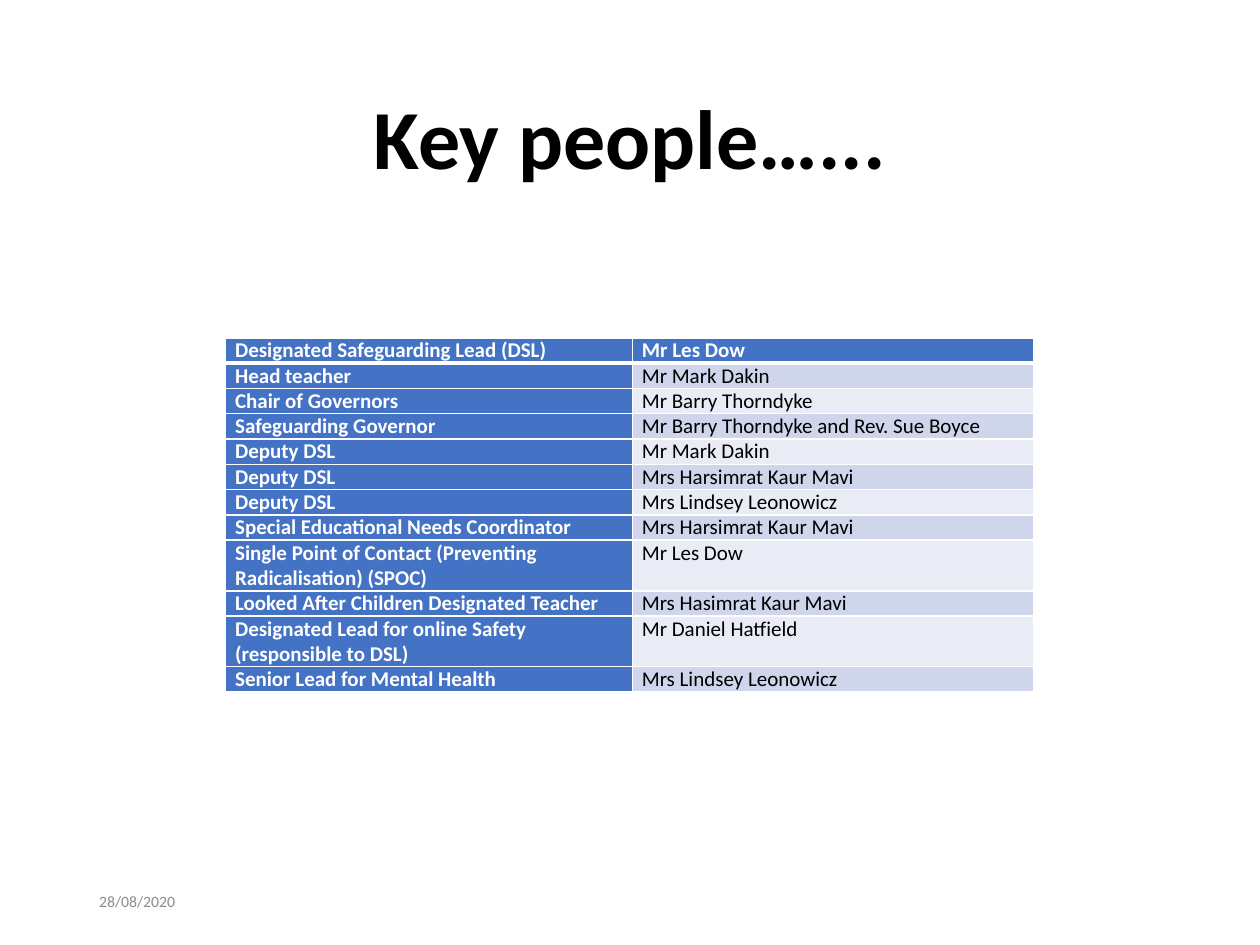
import pptx
import pptx.dml.color
import pptx.enum.text
import pptx.oxml
import pptx.oxml.ns
import pptx.util
from pptx.util import Cm

KEY_PEOPLE = [
    ("Designated Safeguarding Lead (DSL)", "Mr Les Dow"),
    ("Head teacher", "Mr Mark Dakin"),
    ("Chair of Governors", "Mr Barry Thorndyke"),
    ("Safeguarding Governor", "Mr Barry Thorndyke and Rev. Sue Boyce"),
    ("Deputy DSL", "Mr Mark Dakin"),
    ("Deputy DSL", "Mrs Harsimrat Kaur Mavi"),
    ("Deputy DSL", "Mrs Lindsey Leonowicz"),
    ("Special Educational Needs Coordinator", "Mrs Harsimrat Kaur Mavi"),
    ("Single Point of Contact (Preventing Radicalisation) (SPOC)", "Mr Les Dow"),
    ("Looked After Children Designated Teacher", "Mrs Hasimrat Kaur Mavi"),
    ("Designated Lead for online Safety (responsible to DSL)", "Mr Daniel Hatfield"),
    ("Senior Lead for Mental Health", "Mrs Lindsey Leonowicz"),
]
LINE_HEIGHT = 0.51
CHARS_PER_LINE = 42


def colour(hex_code):
    return pptx.dml.color.RGBColor.from_string(hex_code)


class SlideBuilder:
    font = "Calibri"
    white, black, grey = "FFFFFF", "000000", "8C8C8C"
    accent = "4472C4"
    bands = ("E9EBF5", "CFD5EA")

    def __init__(self, slide):
        self.slide = slide

    def style(self, paragraph, size, hex_code, bold=False):
        paragraph.font.name = self.font
        paragraph.font.size = pptx.util.Pt(size)
        paragraph.font.bold = bold
        paragraph.font.color.rgb = colour(hex_code)

    def text(self, wording, left, top, width, height, size, hex_code, bold=False):
        """Add a vertically centred text box and return its paragraph."""
        frame = self.slide.shapes.add_textbox(
            Cm(left), Cm(top), Cm(width), Cm(height)).text_frame
        frame.word_wrap = True
        frame.vertical_anchor = pptx.enum.text.MSO_ANCHOR.MIDDLE
        paragraph = frame.paragraphs[0]
        paragraph.text = wording
        self.style(paragraph, size, hex_code, bold)
        return paragraph

    def borders(self, cell, widths):
        """Draw white borders; widths are points for left, right, top, bottom."""
        properties = cell._tc.get_or_add_tcPr()
        for position, (side, points) in enumerate(zip("LRTB", widths)):
            line = pptx.oxml.parse_xml(
                f'<a:ln{side} {pptx.oxml.ns.nsdecls("a")} w="{pptx.util.Pt(points)}">'
                f'<a:solidFill><a:srgbClr val="{self.white}"/></a:solidFill></a:ln{side}>')
            properties.insert(position, line)

    def cell(self, cell, wording, fill, strong, widths):
        cell.margin_left = cell.margin_right = Cm(0.19)
        cell.margin_top = cell.margin_bottom = 0
        cell.fill.solid()
        cell.fill.fore_color.rgb = colour(fill)
        cell.text = wording
        self.style(cell.text_frame.paragraphs[0], 12,
                   self.white if strong else self.black, strong)
        self.borders(cell, widths)

    def table(self, people, left, top, column_widths):
        line_counts = [1 + len(role) // CHARS_PER_LINE for role, _ in people]
        table = self.slide.shapes.add_table(
            len(people), len(column_widths), Cm(left), Cm(top),
            Cm(sum(column_widths)), Cm(LINE_HEIGHT * sum(line_counts))).table
        for column, width in zip(table.columns, column_widths):
            column.width = Cm(width)
        for index, (person, lines) in enumerate(zip(people, line_counts)):
            table.rows[index].height = Cm(LINE_HEIGHT * lines)
            widths = (1, 1, 3 if index == 1 else 1, 3 if index == 0 else 1)
            for column, wording in enumerate(person):
                strong = index == 0 or column == 0
                fill = self.accent if strong else self.bands[index % 2]
                self.cell(table.cell(index, column), wording, fill, strong, widths)


def main():
    presentation = pptx.Presentation()
    presentation.slide_width, presentation.slide_height = Cm(25.4), Cm(19.05)
    builder = SlideBuilder(presentation.slides.add_slide(presentation.slide_layouts[6]))

    title = builder.text("Key people…...", 1.75, 1.02, 21.9, 3.68, 48, builder.black, True)
    title.alignment = pptx.enum.text.PP_ALIGN.CENTER
    title.line_spacing = 0.9
    builder.text("28/08/2020", 1.75, 17.65, 5.72, 1.02, 9, builder.grey)
    builder.table(KEY_PEOPLE, 4.55, 6.81, (8.2, 8.1))

    presentation.save("out.pptx")


if __name__ == "__main__":
    main()
